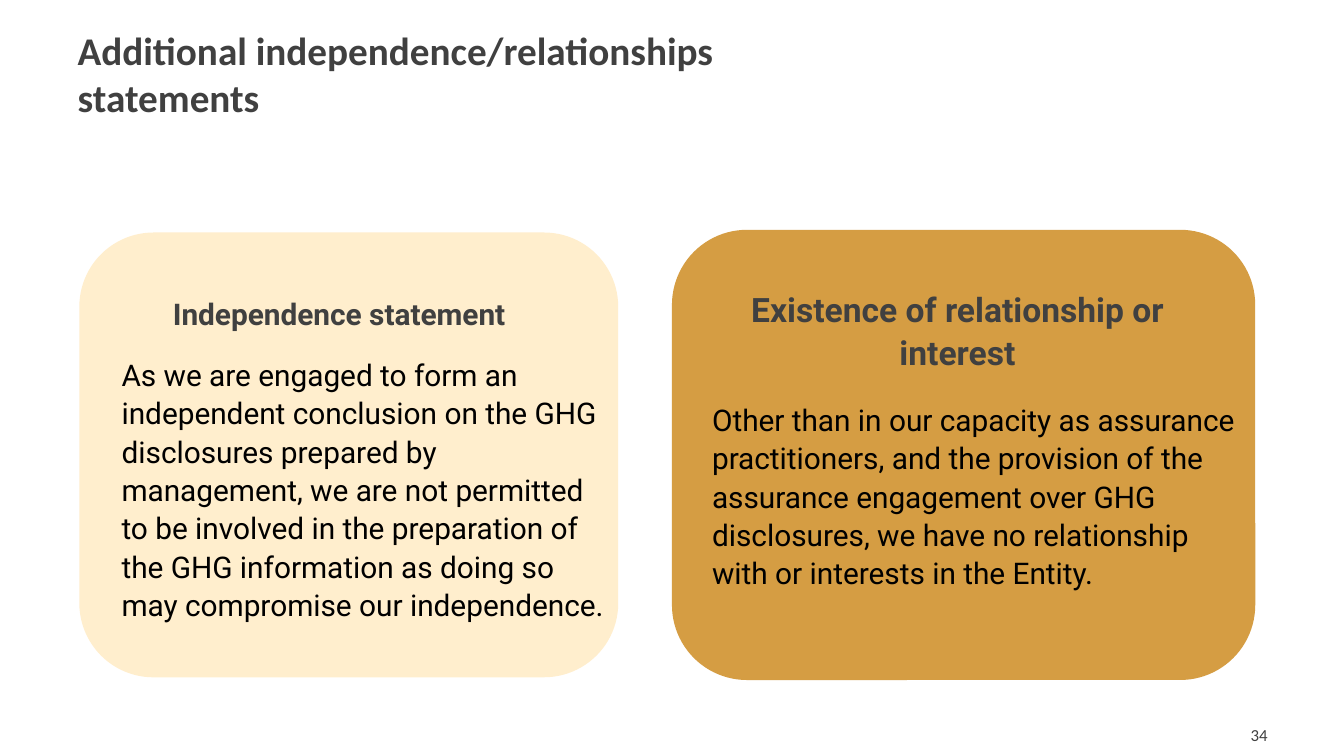
from dataclasses import dataclass

from pptx import Presentation
from pptx.dml.color import RGBColor
from pptx.enum.shapes import MSO_SHAPE
from pptx.enum.text import MSO_ANCHOR, PP_ALIGN
from pptx.util import Inches, Pt

ROUNDED = MSO_SHAPE.ROUNDED_RECTANGLE
LEFT, CENTER, RIGHT = PP_ALIGN.LEFT, PP_ALIGN.CENTER, PP_ALIGN.RIGHT
TOP, MIDDLE = MSO_ANCHOR.TOP, MSO_ANCHOR.MIDDLE

GOLD = RGBColor(0xD5, 0x9D, 0x43)
CREAM = RGBColor(0xFF, 0xEE, 0xCD)
GRAY = RGBColor(0x40, 0x40, 0x40)
BLACK = RGBColor(0x00, 0x00, 0x00)

CARD_INSET = 1.09  # right margin that keeps card text inside its card


@dataclass
class Box:
    left: float
    top: float
    width: float
    height: float

    def lengths(self):
        return [Inches(v) for v in (self.left, self.top, self.width, self.height)]


@dataclass
class Label:
    box: Box
    text: str
    size: float
    font: str = "Roboto"
    color: RGBColor = GRAY
    bold: bool = False
    align: PP_ALIGN = LEFT
    anchor: MSO_ANCHOR = TOP
    right_inset: float = 0.1
    line_spacing: float = 1.0
    space_after: float = 0
    rounded: bool = False


@dataclass
class Card:
    box: Box
    fill: RGBColor
    heading_box: Box
    heading: str
    heading_size: float
    body_box: Box
    body: str
    rounded: bool


def add_rounded(slide, box: Box):
    sp = slide.shapes.add_shape(ROUNDED, *box.lengths())
    sp.shadow.inherit = False
    sp.line.fill.background()
    return sp


def add_label(slide, label: Label) -> None:
    if label.rounded:
        sp = add_rounded(slide, label.box)
        sp.fill.background()
    else:
        sp = slide.shapes.add_textbox(*label.box.lengths())
    tf = sp.text_frame
    tf.word_wrap = True
    tf.vertical_anchor = label.anchor
    tf.margin_right = Inches(label.right_inset)
    p = tf.paragraphs[0]
    p.alignment = label.align
    p.line_spacing = label.line_spacing
    p.space_after = Pt(label.space_after)
    r = p.add_run()
    r.text = label.text
    r.font.name = label.font
    r.font.size = Pt(label.size)
    r.font.bold = label.bold
    r.font.color.rgb = label.color


def add_card(slide, card: Card) -> None:
    sp = add_rounded(slide, card.box)
    sp.fill.solid()
    sp.fill.fore_color.rgb = card.fill
    shared = dict(right_inset=CARD_INSET, line_spacing=1.07, space_after=8,
                  rounded=card.rounded)
    add_label(slide, Label(card.body_box, card.body, 16, color=BLACK, **shared))
    add_label(slide, Label(card.heading_box, card.heading, card.heading_size,
                           bold=True, align=CENTER, **shared))


CARDS = [
    Card(Box(5, 1.71, 4.34, 3.35), GOLD,
         Box(5.38, 2.08, 4.48, 0.78), "Existence of relationship or interest", 18,
         Box(5.2, 2.92, 5.13, 2.28),
         "Other than in our capacity as assurance practitioners, and the provision "
         "of the assurance engagement over GHG disclosures, we have no relationship "
         "with or interests in the Entity.", False),
    Card(Box(0.59, 1.73, 4.01, 3.31), CREAM,
         Box(1.14, 2.11, 3.76, 0.43), "Independence statement", 16,
         Box(0.7, 2.48, 5.02, 2.18),
         "As we are engaged to form an independent conclusion on the GHG disclosures "
         "prepared by management, we are not permitted to be involved in the "
         "preparation of the GHG information as doing so may compromise our "
         "independence.", True),
]


def main() -> None:
    prs = Presentation()
    prs.slide_width = Inches(10)
    prs.slide_height = Inches(10) * 9 // 16  # 16:9 page
    s = prs.slides.add_slide(prs.slide_layouts[6])

    # Title and page number
    add_label(s, Label(Box(0.48, 0.15, 5.47, 0.53),
                       "Additional independence/relationships statements", 21,
                       font="Calibri", bold=True, space_after=3))
    add_label(s, Label(Box(7.28, 5.32, 2.25, 0.3), "34", 9, font="Calibri",
                       align=RIGHT, anchor=MIDDLE))

    # Statement cards
    for card in CARDS:
        add_card(s, card)

    prs.save("out.pptx")


if __name__ == "__main__":
    main()
